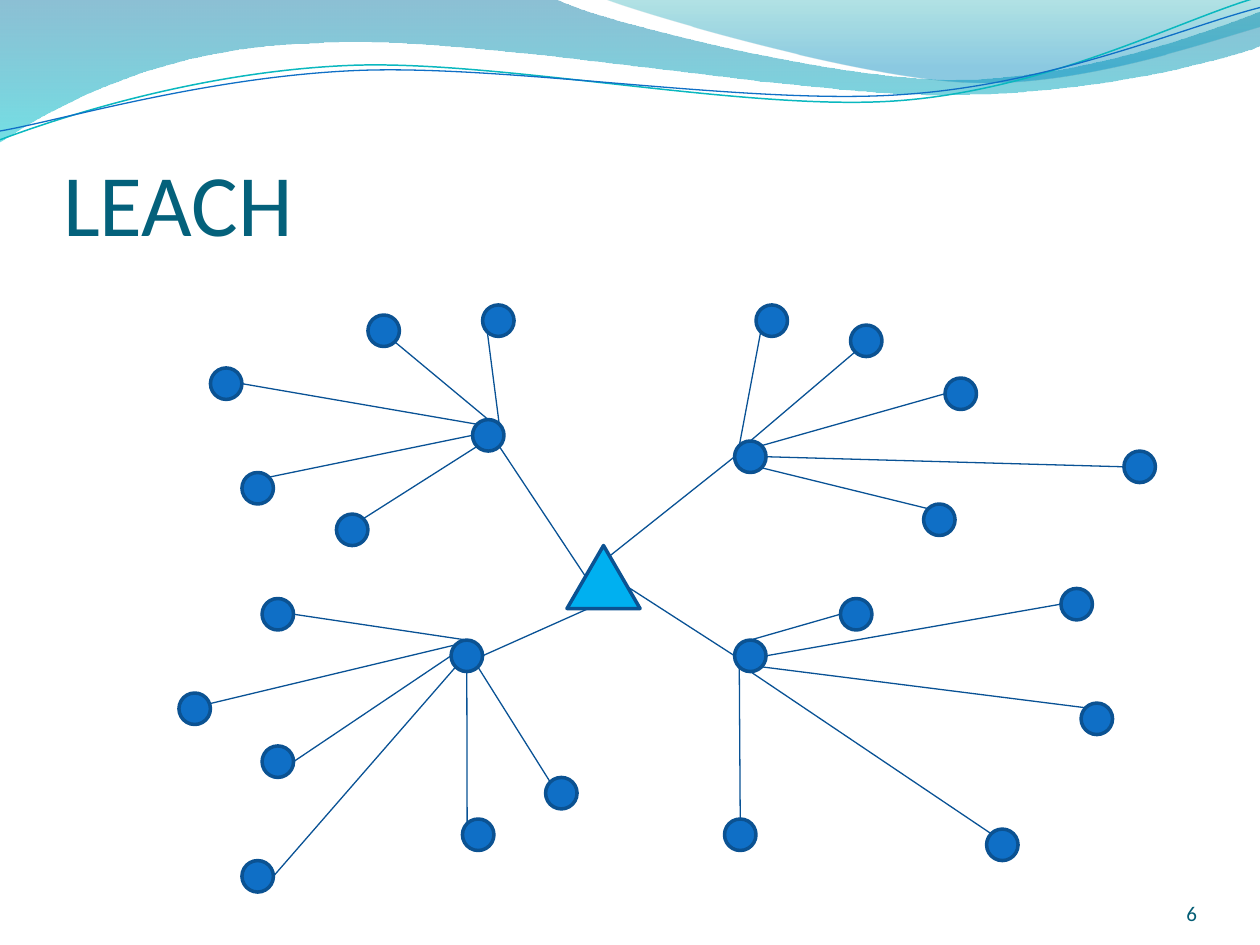
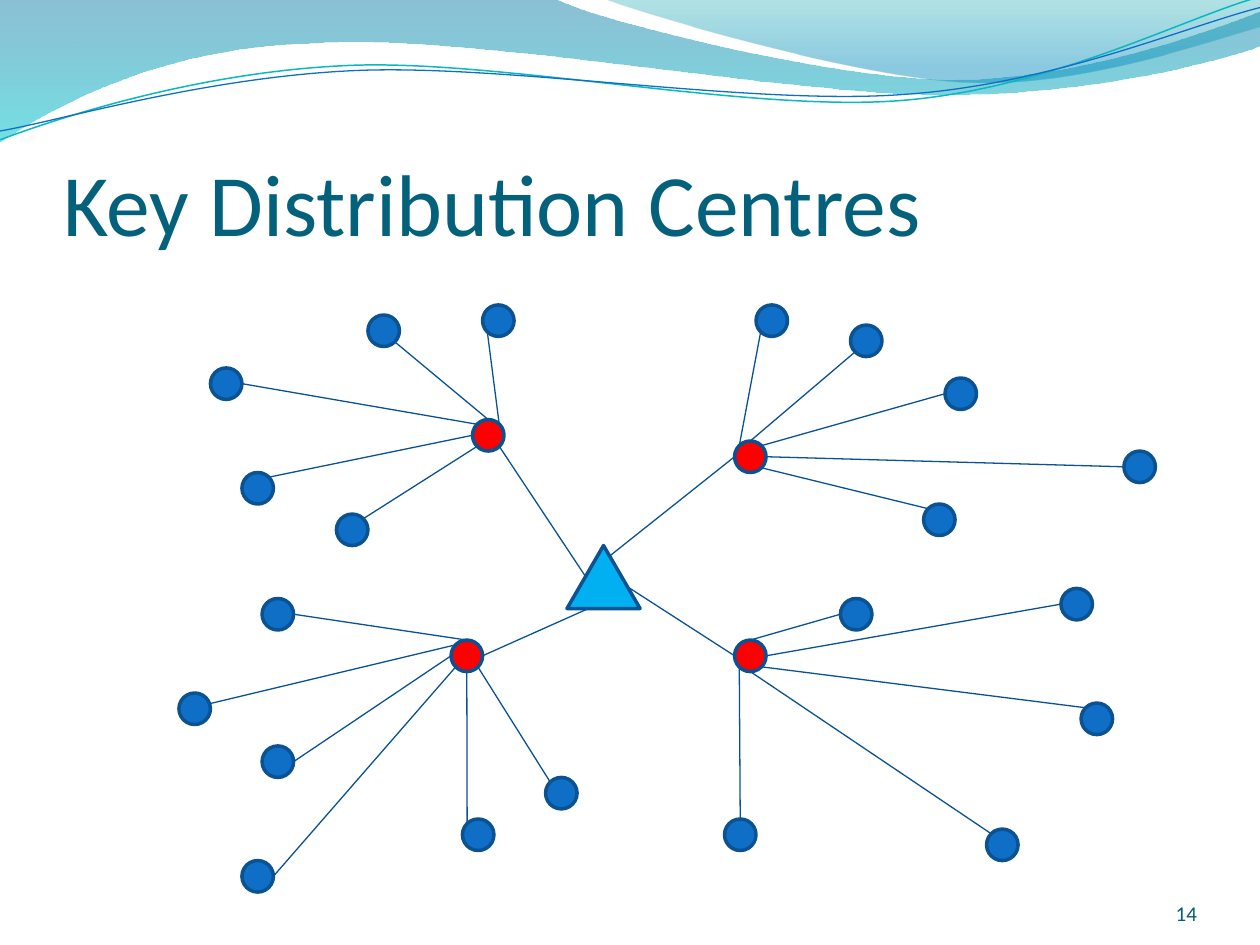
import pptx
import pptx.util
import pptx.dml.color
import pptx.enum.shapes
import pptx.enum.text
import pptx.oxml
import pptx.oxml.ns

Inches = pptx.util.Inches
Pt = pptx.util.Pt
SHAPE = pptx.enum.shapes.MSO_SHAPE
ALIGN = pptx.enum.text.PP_ALIGN
BOTTOM = pptx.enum.text.MSO_ANCHOR.BOTTOM
qn = pptx.oxml.ns.qn

FONT = "Calibri"
TITLE = "04617B"
NUMBER = "045D75"
BLUE = "0F6FC6"
RED = "FF0000"
SKY = "00B0F0"
EDGE = "0B5292"
LINK = "095295"

BANDS = [
    ([(0, 0), (4.4, -0.01),
      (4.76, 0.17, 6.64, 0.63, 7.58, 0.63), (8.53, 0.63, 9.58, 0.26, 10, 0.09),
      (10.01, 0.36),
      (9.83, 0.44, 8.7, 0.76, 7.46, 0.75), (6.22, 0.75, 3.82, 0.28, 2.57, 0.34),
      (1.29, 0.36, 0.46, 0.83, -0.01, 1.13)],
     [(0, "0074A1", 45), (1, "00C6CF", 55)]),
    ([(4.79, -0.01),
      (5.09, 0.11, 6.82, 0.62, 7.69, 0.65), (8.56, 0.69, 9.61, 0.32, 10, 0.21),
      (10, 0)],
     [(0, "00A1A9", 30), (0.8, "008BBF", 45)]),
]
CURVES = [
    ([(0, 1.11), (0.48, 0.93, 1.58, 0.57, 2.77, 0.52),
      (3.95, 0.47, 5.93, 0.89, 7.13, 0.8), (8.33, 0.71, 9.38, 0.15, 9.98, -0.02)],
     "0AB8BF", 0.85),
    ([(0, 1.04), (0.47, 0.96, 1.64, 0.61, 2.83, 0.56),
      (4.03, 0.51, 5.97, 0.84, 7.17, 0.75), (8.36, 0.67, 9.41, 0.21, 10, 0.06)],
     BLUE, 0.75),
]

SIZE = 0.25
SITES = {
    "N": (0, -1), "NE": (0.7, -0.7), "ENE": (1, -0.33), "E": (1, 0),
    "SE": (0.7, 0.7), "S": (0, 1), "SW": (-0.7, 0.7), "W": (-1, 0),
    "NW": (-0.7, -0.7),
}
BASE = (3.08, 1.91)
GROUPS = [
    ((2.33, 0.91), "SE", (3.23, 2.16), [
        ("NE", (2.41, 0), "SW"), ("N", (1.5, 0.08), "SE"),
        ("SW", (1.25, 1.66), "NE"), ("W", (0.5, 1.33), "NE"),
        ("NW", (0.25, 0.5), "E")]),
    ((2.16, 2.66), "E", (3.25, 2.41), [
        ("N", (0.66, 2.33), "E"), ("SE", (2.91, 3.75), "NW"),
        ("S", (2.25, 4.08), "NW"), ("W", (0.66, 3.5), "E"),
        ("NW", (0, 3.08), "ENE"), ("SW", (0.5, 4.41), "E")]),
    ((4.41, 2.66), "W", (3.58, 2.25), [
        ("SW", (4.33, 4.08), "N"), ("S", (6.41, 4.16), "NW"),
        ("N", (5.25, 2.33), "W"), ("SE", (7.16, 3.16), "NW"),
        ("E", (7, 2.25), "W")]),
    ((4.41, 1.08), "W", (3.41, 2), [
        ("NW", (4.58, 0), "SW"), ("N", (5.33, 0.16), "SW"),
        ("NE", (6.08, 0.58), "W"), ("E", (7.5, 1.16), "W"),
        ("SE", (5.91, 1.58), "NW")]),
]


def paint(target, color):
    target.rgb = pptx.dml.color.RGBColor.from_string(color)


def fill(shape, color):
    shape.fill.solid()
    paint(shape.fill.fore_color, color)


def stroke(shape, color, width):
    paint(shape.line.color, color)
    shape.line.width = Pt(width)


def make(tag, **values):
    text = " ".join(f'{key}="{value}"' for key, value in values.items())
    return pptx.oxml.parse_xml(f'<a:{tag} {pptx.oxml.ns.nsdecls("a")} {text}/>')


def outline(slide, route, close):
    ends = [tuple(Inches(value) for value in part[-2:]) for part in route]
    form = slide.shapes.build_freeform(*ends[0])
    form.add_line_segments(ends[1:], close=close)
    shape = form.convert_to_shape()
    shape.shadow.inherit = False
    parts = list(shape.element.spPr.iter(qn("a:lnTo")))
    for node, part in zip(parts, route[1:]):
        if len(part) == 6:
            node.tag = qn("a:cubicBezTo")
            for place in (0, 1):
                x, y = part[2 * place:2 * place + 2]
                node.insert(place, make(
                    "pt", x=Inches(x) - shape.left, y=Inches(y) - shape.top))
    return shape


def blend(shape, stops):
    shape.fill.gradient()
    shape.fill.gradient_angle = 270
    for stop, (place, color, _) in zip(shape.fill.gradient_stops, stops):
        stop.position = place
        paint(stop.color, color)
    tints = list(shape.element.spPr.iter(qn("a:srgbClr")))
    for tint, (_, _, alpha) in zip(tints, stops):
        tint.append(make("alpha", val=alpha * 1000))
    shape.line.fill.background()


def add_waves(slide, layout):
    waves = []
    for route, stops in BANDS:
        band = outline(slide, route, True)
        blend(band, stops)
        waves.append(band)
    for route, color, width in CURVES:
        curve = outline(slide, route, False)
        curve.fill.background()
        stroke(curve, color, width)
        waves.append(curve)
    for wave in waves:
        layout.shapes.element.append(wave.element)


def set_layout(layout):
    for holder in list(layout.placeholders):
        if holder.placeholder_format.idx:
            holder.element.getparent().remove(holder.element)
    title = layout.placeholders[0]
    title.left, title.top = Inches(0.5), Inches(0.77)
    title.width, title.height = Inches(9), Inches(1.25)


def write(shape, text, size, color, align, top=0):
    frame = shape.text_frame
    frame.text = text
    frame.word_wrap = True
    frame.auto_size = pptx.enum.text.MSO_AUTO_SIZE.NONE
    frame.vertical_anchor = BOTTOM
    frame.margin_left = frame.margin_right = frame.margin_bottom = 0
    frame.margin_top = Inches(top)
    line = frame.paragraphs[0]
    line.alignment = align
    font = line.runs[0].font
    font.name, font.size = FONT, Pt(size)
    paint(font.color, color)


def add_node(slide, kind, x, y, width, height, color):
    node = slide.shapes.add_shape(
        kind, Inches(x), Inches(y), Inches(width), Inches(height))
    node.shadow.inherit = False
    fill(node, color)
    stroke(node, EDGE, 2)


def add_link(slide, start, end):
    link = slide.shapes.add_connector(
        pptx.enum.shapes.MSO_CONNECTOR.STRAIGHT,
        *[Inches(value) for value in (*start, *end)])
    stroke(link, LINK, 0.75)
    link.element.spPr.append(make("effectLst"))


def add_net(slide, left, top, tint):
    def shift(point):
        return left + point[0], top + point[1]

    def rim(point, site):
        x, y = shift(point)
        dx, dy = SITES[site]
        return x + SIZE / 2 * (1 + dx), y + SIZE / 2 * (1 + dy)

    for hub, _, _, leaves in GROUPS:
        add_node(slide, SHAPE.OVAL, *shift(hub), SIZE, SIZE, tint)
        for _, leaf, _ in leaves:
            add_node(slide, SHAPE.OVAL, *shift(leaf), SIZE, SIZE, BLUE)
    add_node(slide, SHAPE.ISOSCELES_TRIANGLE, *shift(BASE), 0.58, 0.5, SKY)
    for hub, exit, goal, leaves in GROUPS:
        add_link(slide, rim(hub, exit), shift(goal))
        for site, leaf, end in leaves:
            add_link(slide, rim(hub, site), rim(leaf, end))


def add_page(deck, layout, title, number, tint):
    slide = deck.slides.add_slide(layout)
    write(slide.shapes.title, title, 50, TITLE, ALIGN.LEFT, 0.05)
    if len(deck.slides) == 1:
        add_waves(slide, layout)
    box = slide.shapes.add_textbox(Inches(8.67), Inches(6.95), Inches(0.83), Inches(0.4))
    write(box, number, 12, NUMBER, ALIGN.RIGHT)
    add_net(slide, 1.42, 2.42, tint)


def main():
    deck = pptx.Presentation()
    deck.slide_width, deck.slide_height = Inches(10), Inches(7.5)
    layout = deck.slide_layouts[5]
    set_layout(layout)
    add_page(deck, layout, "LEACH", "6", BLUE)
    add_page(deck, layout, "Key Distribution Centres", "14", RED)
    deck.save("out.pptx")


if __name__ == "__main__":
    main()
